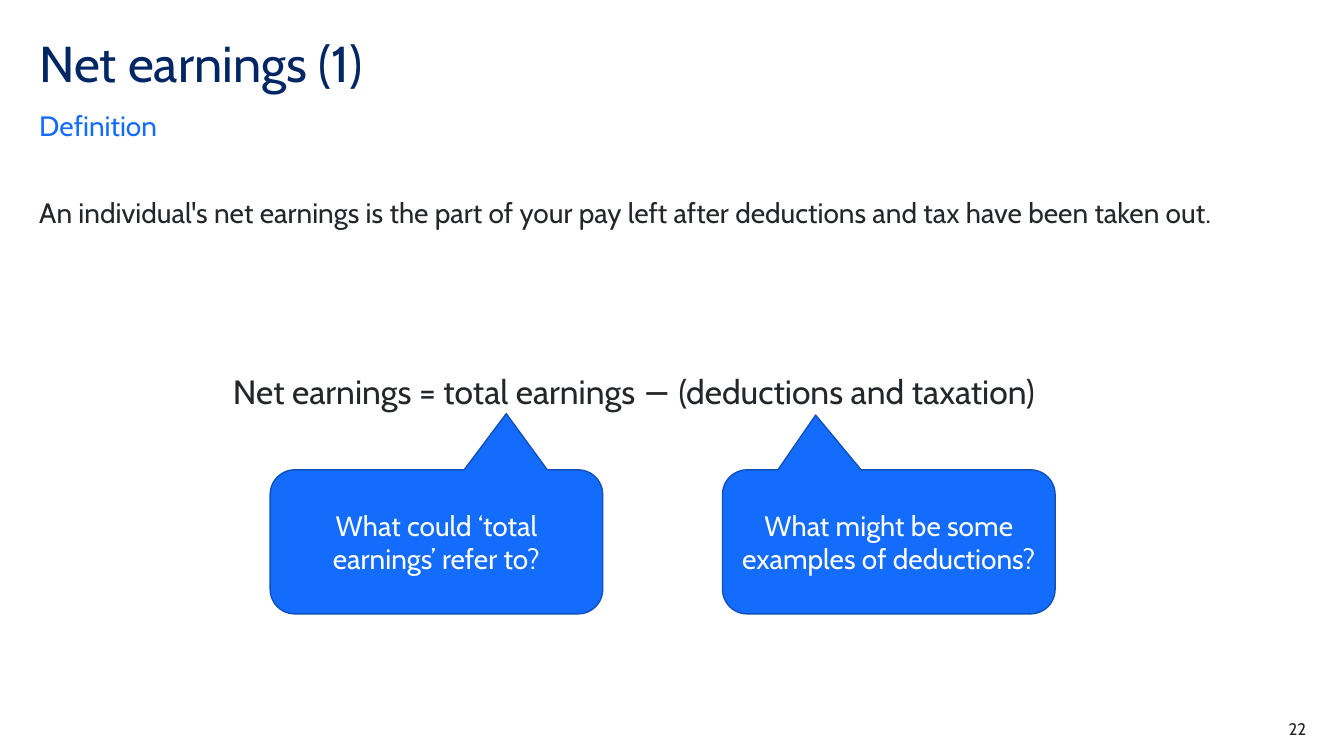
from pptx import Presentation
from pptx.dml.color import RGBColor
from pptx.enum.shapes import MSO_SHAPE
from pptx.enum.text import MSO_ANCHOR, PP_ALIGN
from pptx.util import Cm, Pt

NAVY = RGBColor(0x00, 0x26, 0x64)
BLUE = RGBColor(0x14, 0x6C, 0xFD)
DARK_BLUE = RGBColor(0x0F, 0x50, 0xBB)
INK = RGBColor(0x22, 0x27, 0x2B)
WHITE = RGBColor(0xFF, 0xFF, 0xFF)
FONT = "Cabin"

LEFT, CENTER, RIGHT = PP_ALIGN.LEFT, PP_ALIGN.CENTER, PP_ALIGN.RIGHT
TOP, MIDDLE, BOTTOM = MSO_ANCHOR.TOP, MSO_ANCHOR.MIDDLE, MSO_ANCHOR.BOTTOM
CALLOUT = MSO_SHAPE.ROUNDED_RECTANGULAR_CALLOUT

# Lengths in centimetres
MARGIN = 0.99
NO_INSET = (0, 0, 0, 0)
SHAPE_INSET = (0.25, 0.13, 0.25, 0.13)
FORMULA_INSET = (0.51, 0.13, 0.25, 0.13)

# text, (left, top, width, height), insets, anchor, size, colour, paragraph format
TEXTS = [
    ("Net earnings (1)", (MARGIN, 0.99, 28, 1.52), NO_INSET, TOP, 36, NAVY,
     {"alignment": LEFT, "line_spacing": 0.9}),
    ("Definition", (MARGIN, 2.72, 28, 0.86), NO_INSET, BOTTOM, 20, BLUE,
     {"alignment": LEFT, "space_after": Pt(12)}),
    ("An individual's net earnings is the part of your pay left after "
     "deductions and tax have been taken out.",
     (MARGIN, 4.5, 31.9, 2.72), NO_INSET, TOP, 20, INK,
     {"alignment": LEFT, "line_spacing": 1.5, "space_after": Pt(12)}),
    ("Net earnings = total earnings − (deductions and taxation)",
     (5.36, 8.71, 23.16, 1.6), FORMULA_INSET, TOP, 24, INK,
     {"alignment": LEFT, "line_spacing": 1.5}),
    ("22", (30.91, 18.11, 2.01, 0.51), NO_INSET, TOP, 12, INK,
     {"alignment": RIGHT}),
]

# text, left, pointer tip as a share of width and height from the centre
CALLOUTS = [
    ("What could ‘total earnings’ refer to?", 6.81, (0.21, -0.89)),
    ("What might be some examples of deductions?", 18.21, (-0.22, -0.88)),
]
CALLOUT_TOP, CALLOUT_WIDTH, CALLOUT_HEIGHT = 11.84, 8.38, 3.63
CORNER = 0.17


def write(shape, text, insets, anchor, size, colour, paragraph_format):
    frame = shape.text_frame
    frame.word_wrap = True
    frame.vertical_anchor = anchor
    for side, inset in zip(("left", "top", "right", "bottom"), insets):
        setattr(frame, f"margin_{side}", Cm(inset))
    para = frame.paragraphs[0]
    for name, value in paragraph_format.items():
        setattr(para, name, value)
    span = para.add_run()
    span.text = text
    for name, value in {"name": FONT, "size": Pt(size)}.items():
        setattr(span.font, name, value)
    span.font.color.rgb = colour


def add_callout(page, text, left, tip):
    shape = page.shapes.add_shape(CALLOUT, Cm(left), Cm(CALLOUT_TOP),
                                  Cm(CALLOUT_WIDTH), Cm(CALLOUT_HEIGHT))
    for index, value in enumerate((*tip, CORNER)):
        shape.adjustments[index] = value
    shape.shadow.inherit = False
    shape.fill.solid()
    shape.fill.fore_color.rgb = BLUE
    shape.line.color.rgb = DARK_BLUE
    shape.line.width = Pt(1)
    write(shape, text, SHAPE_INSET, MIDDLE, 20, WHITE, {"alignment": CENTER})


def main():
    deck = Presentation()
    deck.slide_width, deck.slide_height = Cm(33.87), Cm(19.05)
    page = deck.slides.add_slide(deck.slide_layouts[6])
    for text, place, *style in TEXTS:
        box = page.shapes.add_textbox(*map(Cm, place))
        write(box, text, *style)
    for callout in CALLOUTS:
        add_callout(page, *callout)
    deck.save("out.pptx")


if __name__ == "__main__":
    main()
